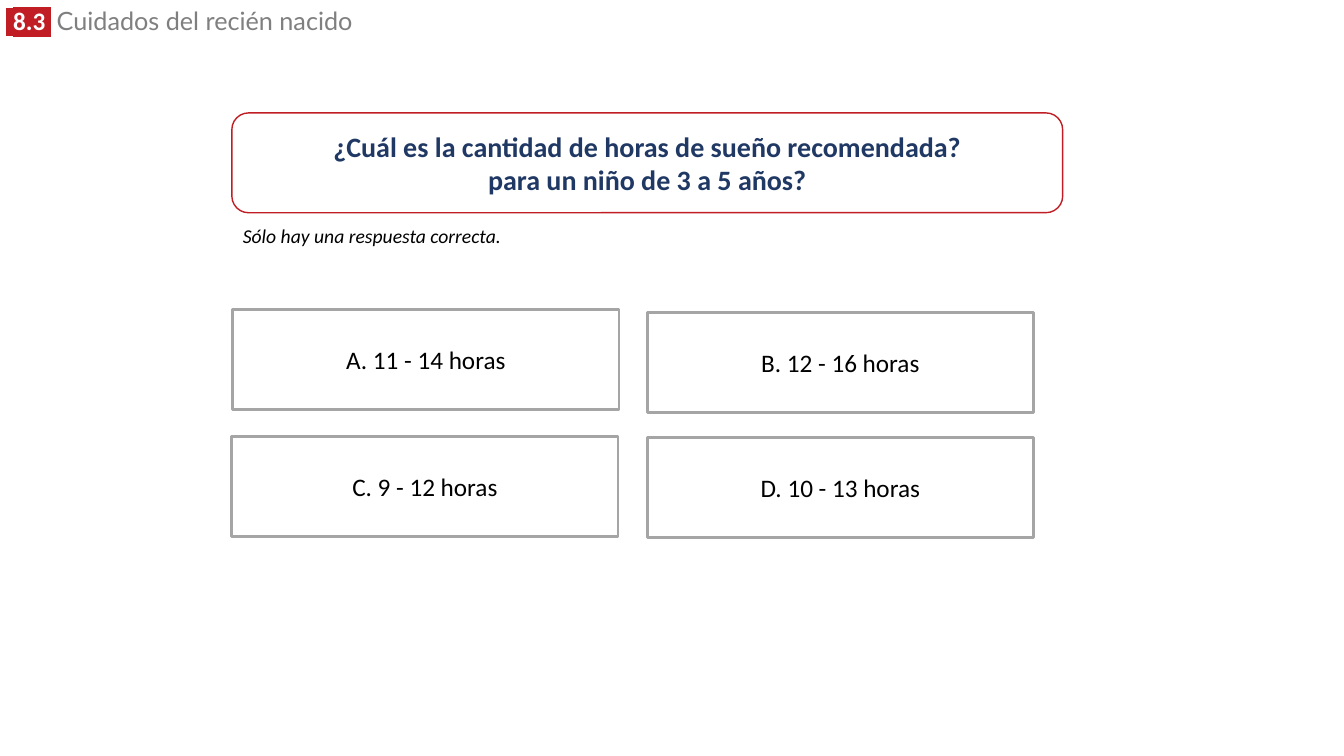
from lxml.etree import SubElement
from pptx import Presentation
from pptx.dml.color import RGBColor
from pptx.enum.shapes import MSO_SHAPE
from pptx.enum.text import MSO_ANCHOR, MSO_AUTO_SIZE, PP_ALIGN
from pptx.oxml.ns import qn
from pptx.util import Inches, Pt

COLORS = {
    "white": "FFFFFF",
    "red": "C01E24",
    "gray_text": "7F7F7F",
    "gray_line": "A5A5A5",
    "navy": "203864",
    "black": "000000",
}
ANSWERS = [
    ("A. 11 - 14 horas", 2.31, 3.07),
    ("B. 12 - 16 horas", 6.42, 3.1),
    ("C. 9 - 12 horas", 2.3, 4.33),
    ("D. 10 - 13 horas", 6.42, 4.34),
]


def rgb(name):
    return RGBColor.from_string(COLORS[name])


def add_text(p, text, size=18, font="Calibri", color="black",
             bold=False, italic=False, highlight=None):
    r = p.add_run()
    r.text = text
    f = r.font
    f.size, f.name, f.bold, f.italic = Pt(size), font, bold, italic
    f.color.rgb = rgb(color)
    if highlight:
        rpr = r._r.get_or_add_rPr()
        mark = SubElement(rpr, qn("a:highlight"))
        SubElement(mark, qn("a:srgbClr"), val=COLORS[highlight])
        rpr.find(qn("a:solidFill")).addnext(mark)


def add_box(slide, kind, left, top, width, line, line_width, lines, **fmt):
    """Add a white outlined box with centred lines of text."""
    sp = slide.shapes.add_shape(kind, Inches(left), Inches(top),
                                Inches(width), Inches(0.99))
    sp.shadow.inherit = False
    sp.fill.solid()
    sp.fill.fore_color.rgb = rgb("white")
    sp.line.color.rgb = rgb(line)
    sp.line.width = Pt(line_width)
    tf = sp.text_frame
    tf.word_wrap = True
    tf.vertical_anchor = MSO_ANCHOR.MIDDLE
    for i, text in enumerate(lines):
        p = tf.add_paragraph() if i else tf.paragraphs[0]
        p.alignment = PP_ALIGN.CENTER
        add_text(p, text, **fmt)


def format_title(title):
    title.left, title.top = Inches(-0.04), Inches(0.06)
    title.width, title.height = Inches(4.61), Inches(0.34)
    tf = title.text_frame
    tf.word_wrap = True
    tf.auto_size = MSO_AUTO_SIZE.SHAPE_TO_FIT_TEXT
    tf.vertical_anchor = MSO_ANCHOR.TOP
    p = tf.paragraphs[0]
    p.alignment = PP_ALIGN.LEFT
    p.line_spacing = 0.8
    badge = {"color": "white", "bold": True, "highlight": "red"}
    add_text(p, " ", font="Arial", **badge)
    add_text(p, "8.3 ", **badge)
    add_text(p, " ", color="gray_text")
    add_text(p, "Cuidados del recién nacido", font="Lato", color="gray_text")


def add_note(slide, text):
    sp = slide.shapes.add_textbox(Inches(2.31), Inches(2.17),
                                  Inches(3.67), Inches(0.34))
    tf = sp.text_frame
    tf.word_wrap = True
    tf.auto_size = MSO_AUTO_SIZE.SHAPE_TO_FIT_TEXT
    add_text(tf.paragraphs[0], text, size=14, italic=True)


def main():
    prs = Presentation()
    prs.slide_width, prs.slide_height = Inches(13.33), Inches(7.5)
    s = prs.slides.add_slide(prs.slide_layouts[5])
    format_title(s.shapes.title)
    add_box(s, MSO_SHAPE.ROUNDED_RECTANGLE, 2.3, 1.12, 8.24, "red", 1,
            ["¿Cuál es la cantidad de horas de sueño recomendada?",
             "para un niño de 3 a 5 años?"],
            size=20, color="navy", bold=True)
    add_note(s, "Sólo hay una respuesta correcta.")
    for text, left, top in ANSWERS:
        add_box(s, MSO_SHAPE.RECTANGLE, left, top, 3.83, "gray_line", 2, [text])
    prs.save("out.pptx")


if __name__ == "__main__":
    main()
